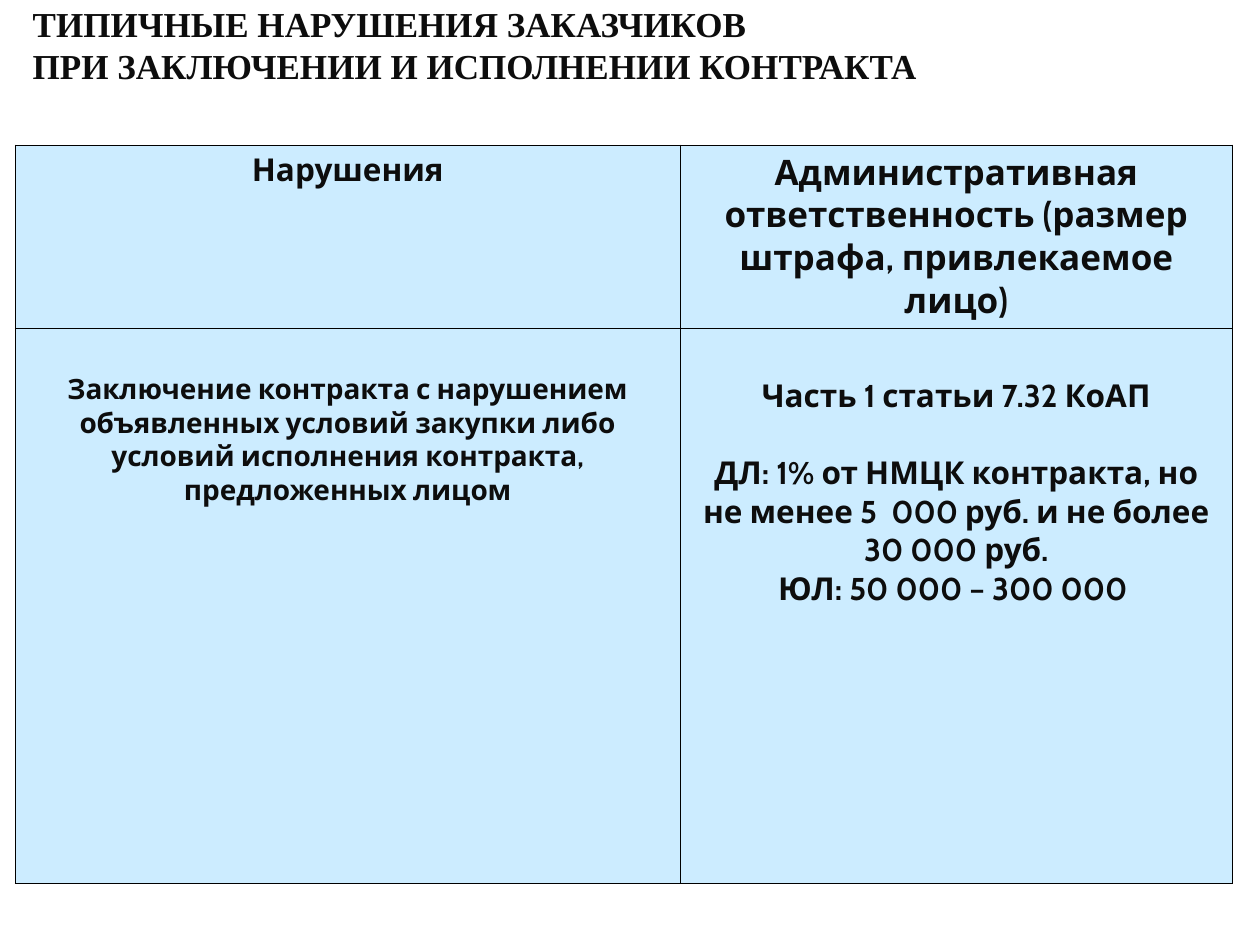
from lxml import etree
from pptx import Presentation
from pptx.dml.color import RGBColor
from pptx.enum import text as t
from pptx.oxml import ns
from pptx.util import Inches, Pt

TITLE = "ТИПИЧНЫЕ НАРУШЕНИЯ ЗАКАЗЧИКОВ\nПРИ ЗАКЛЮЧЕНИИ И ИСПОЛНЕНИИ КОНТРАКТА"
INK, SKY, LINE = "0D0D0D", "CCECFF", "000000"
COLS = [5.28, 4.38]
ROWS = [1.34, 4.41]
# Each cell: font size, top margin in inches, paragraphs as (text, space before)
CELLS = [
    [
        (18, 0.05, [("Нарушения", 0)]),
        (20, 0.05, [("Административная ответственность (размер штрафа, "
                     "привлекаемое лицо)", 0)]),
    ],
    [
        (16, 0.35, [("Заключение контракта с нарушением объявленных условий "
                     "закупки либо условий исполнения контракта, "
                     "предложенных лицом", 0)]),
        (18, 0.39, [("Часть 1 статьи 7.32 КоАП", 0),
                    ("ДЛ: 1% от НМЦК контракта, но не менее 5  000 руб. "
                     "и не более 30 000 руб.", 22),
                    ("ЮЛ: 50 000 – 300 000 ", 0)]),
    ],
]


def color(code):
    return RGBColor.from_string(code)


def style(para, face, size, align):
    para.alignment = align
    for run in para.runs:
        font = run.font
        font.name, font.size, font.bold = face, Pt(size), True
        font.color.rgb = color(INK)


def border(cell):
    """Draw a thin line on all four sides; lines must precede the fill."""
    props = cell._tc.get_or_add_tcPr()
    for i, side in enumerate(("lnL", "lnR", "lnT", "lnB")):
        line = etree.Element(ns.qn("a:" + side), w=str(Pt(0.45)))
        fill = etree.SubElement(line, ns.qn("a:solidFill"))
        etree.SubElement(fill, ns.qn("a:srgbClr"), val=LINE)
        props.insert(i, line)


def fill_cell(cell, size, top, paras):
    cell.fill.solid()
    cell.fill.fore_color.rgb = color(SKY)
    border(cell)
    cell.margin_top = Inches(top)
    frame = cell.text_frame
    for i, (words, gap) in enumerate(paras):
        para = frame.add_paragraph() if i else frame.paragraphs[0]
        para.text = words
        if gap:
            para.space_before = Pt(gap)
        style(para, "Cabin", size, t.PP_ALIGN.CENTER)


def main():
    prs = Presentation()
    prs.slide_width, prs.slide_height = Inches(10), Inches(7.5)
    slide = prs.slides.add_slide(prs.slide_layouts[5])

    title = slide.shapes.title
    title.left, title.top = Inches(0.16), Inches(0)
    title.width, title.height = Inches(9.84), Inches(0.7)
    frame = title.text_frame
    frame.text = TITLE
    frame.auto_size = t.MSO_AUTO_SIZE.NONE
    frame.vertical_anchor = t.MSO_ANCHOR.MIDDLE
    for para in frame.paragraphs:
        style(para, "Times New Roman", 20, t.PP_ALIGN.LEFT)

    table = slide.shapes.add_table(
        len(ROWS), len(COLS), Inches(0.12), Inches(1.15),
        Inches(sum(COLS)), Inches(sum(ROWS))).table
    for col, width in zip(table.columns, COLS):
        col.width = Inches(width)
    for row, height, cells in zip(table.rows, ROWS, CELLS):
        row.height = Inches(height)
        for cell, data in zip(row.cells, cells):
            fill_cell(cell, *data)

    prs.save("out.pptx")


if __name__ == "__main__":
    main()
